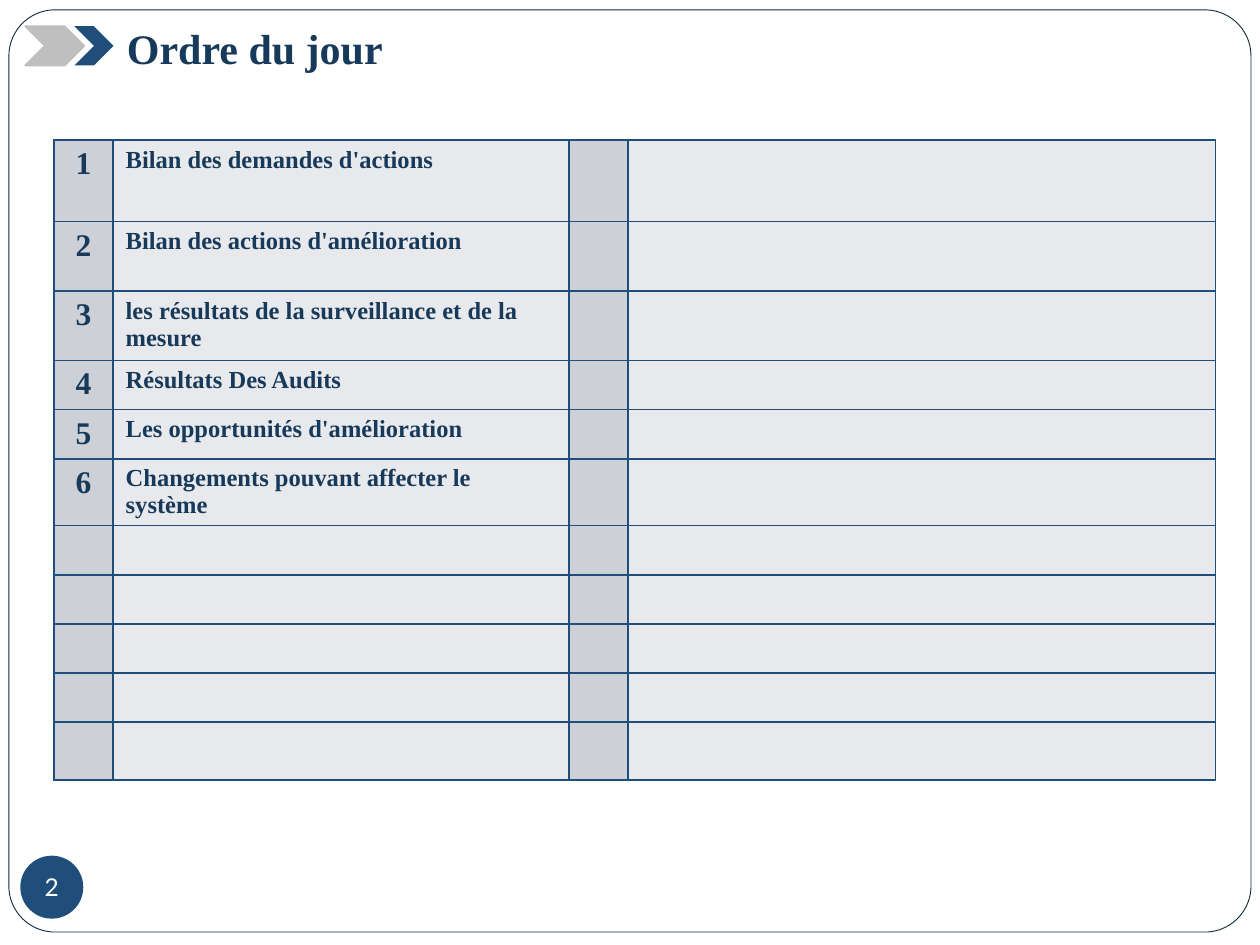
"""Build the agenda slide with its numbered table, title and page badge."""
from lxml import etree
from pptx import Presentation
from pptx.dml.color import RGBColor
from pptx.enum import shapes, text
from pptx.oxml import ns
from pptx.util import Cm, Pt

TITLE = "Ordre du jour"
PAGE = "2"
AGENDA = [
    "Bilan des demandes d'actions",
    "Bilan des actions d'amélioration",
    "les résultats de la surveillance et de la mesure",
    "Résultats Des Audits",
    "Les opportunités d'amélioration",
    "Changements pouvant affecter le système",
]
COLUMN_WIDTHS = [1.19, 9.19, 1.19, 11.84]
ROW_HEIGHTS = [1.65, 1.4, 1.4, 0.99, 0.99, 1.35] + [0.99] * 4 + [1.17]
BLUE, INK, WHITE, GREY = "1E4E79", "173A5B", "FFFFFF", "BFBFBF"
NUMBER_FILL, TOPIC_FILL = "CDD0D7", "E8E9EC"
SERIF = "Times New Roman"


def color(value):
    return RGBColor.from_string(value)


def set_font(paragraph, size, name=SERIF, ink=INK, bold=True):
    font = paragraph.font
    font.size, font.name, font.bold = Pt(size), name, bold
    font.color.rgb = color(ink)


def add_shape(slide, kind, box, fill, line=None, width=1):
    shape = slide.shapes.add_shape(kind, *map(Cm, box))
    shape.shadow.inherit = False
    shape.fill.solid()
    shape.fill.fore_color.rgb = color(fill)
    if line:
        shape.line.color.rgb = color(line)
        shape.line.width = Pt(width)
    else:
        shape.line.fill.background()
    return shape


def add_borders(cell):
    properties = cell._tc.get_or_add_tcPr()
    for index, side in enumerate(("lnL", "lnR", "lnT", "lnB")):
        line = etree.Element(ns.qn(f"a:{side}"), w=str(Pt(1)))
        fill = etree.SubElement(line, ns.qn("a:solidFill"))
        etree.SubElement(fill, ns.qn("a:srgbClr"), val=BLUE)
        properties.insert(index, line)


def add_agenda(slide):
    frame = slide.shapes.add_table(
        len(ROW_HEIGHTS), len(COLUMN_WIDTHS), Cm(1.09), Cm(2.82),
        Cm(sum(COLUMN_WIDTHS)), Cm(sum(ROW_HEIGHTS)))
    table = frame.table
    table.first_row = table.horz_banding = False
    for column, width in zip(table.columns, COLUMN_WIDTHS):
        column.width = Cm(width)
    for row_index, height in enumerate(ROW_HEIGHTS):
        row = table.rows[row_index]
        row.height = Cm(height)
        values = ["", ""]
        if row_index < len(AGENDA):
            values = [str(row_index + 1), AGENDA[row_index]]
        for column_index, cell in enumerate(row.cells):
            is_number = column_index % 2 == 0
            cell.fill.solid()
            cell.fill.fore_color.rgb = color(NUMBER_FILL if is_number else TOPIC_FILL)
            add_borders(cell)
            value = values[column_index] if column_index < 2 else ""
            cell.text = value
            paragraph = cell.text_frame.paragraphs[0]
            set_font(paragraph, 18 if is_number and value else 14)
            if is_number:
                paragraph.alignment = text.PP_ALIGN.CENTER


def add_title(slide):
    box = slide.shapes.add_textbox(Cm(2.31), Cm(0.33), Cm(7.19), Cm(1.27))
    box.text_frame.word_wrap = True
    paragraph = box.text_frame.paragraphs[0]
    paragraph.text = TITLE
    set_font(paragraph, 24)


def add_badge(slide):
    badge = add_shape(slide, shapes.MSO_SHAPE.OVAL, (0.41, 17.25, 1.27, 1.27), BLUE)
    frame = badge.text_frame
    frame.margin_left = frame.margin_right = frame.margin_top = frame.margin_bottom = 0
    frame.word_wrap = False
    frame.vertical_anchor = text.MSO_ANCHOR.MIDDLE
    paragraph = frame.paragraphs[0]
    paragraph.text = PAGE
    paragraph.alignment = text.PP_ALIGN.CENTER
    set_font(paragraph, 14, "Lato", WHITE, False)


def main():
    presentation = Presentation()
    presentation.slide_width, presentation.slide_height = Cm(25.4), Cm(19.05)
    slide = presentation.slides.add_slide(presentation.slide_layouts[6])
    border = add_shape(slide, shapes.MSO_SHAPE.ROUNDED_RECTANGLE,
                       (0.18, 0.2, 25.04, 18.59), WHITE, "0F273C", 0.5)
    border.adjustments[0] = 0.05
    add_agenda(slide)
    chevron = shapes.MSO_SHAPE.CHEVRON
    add_shape(slide, chevron, (0.51, 0.53, 1.19, 0.79), GREY, GREY)
    add_shape(slide, chevron, (1.5, 0.53, 0.79, 0.79), BLUE)
    add_title(slide)
    add_badge(slide)
    presentation.save("out.pptx")


if __name__ == "__main__":
    main()
